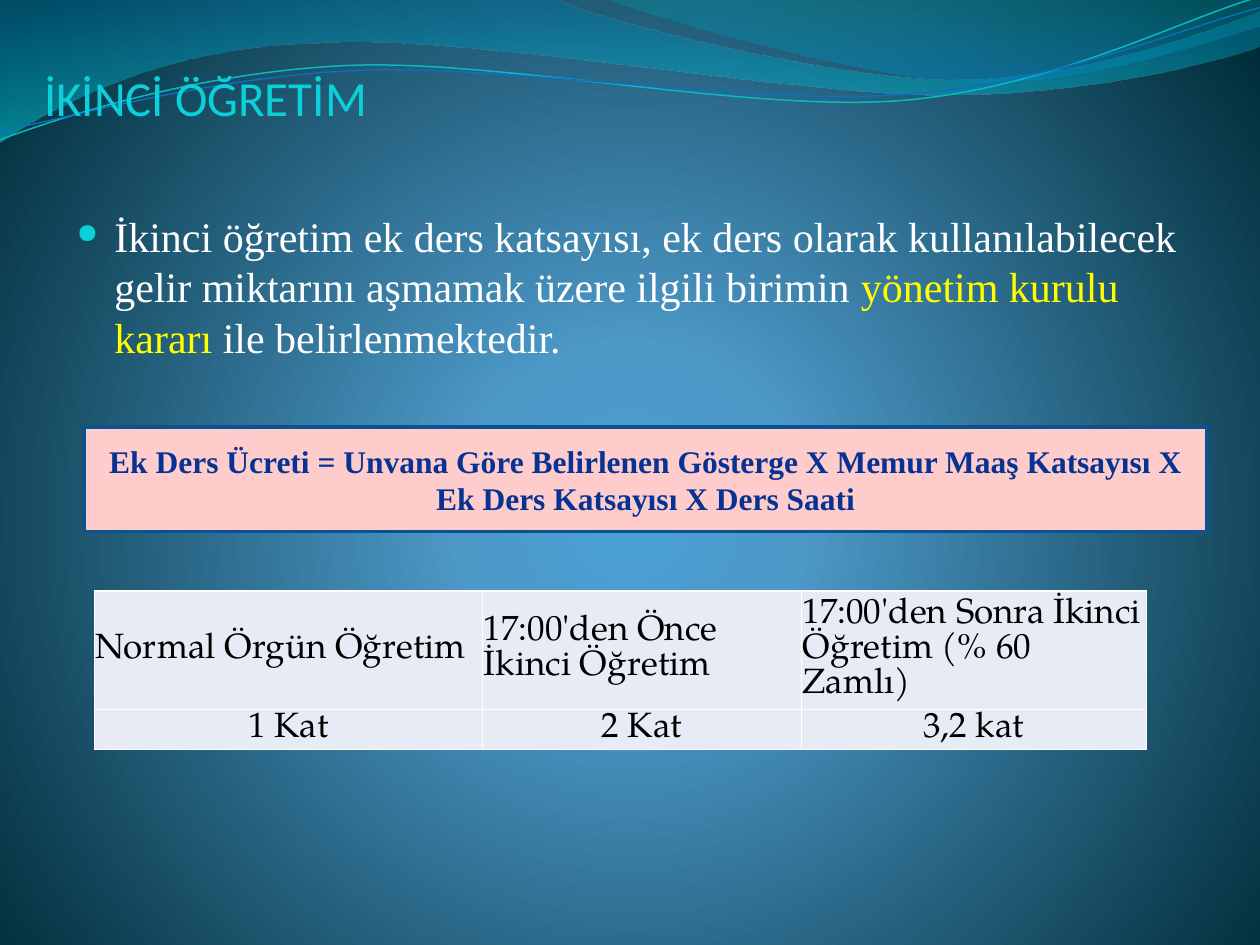
import dataclasses
import typing

import pptx
import pptx.dml.color
import pptx.enum.shapes
import pptx.enum.text
import pptx.oxml
import pptx.oxml.ns
import pptx.util

Inches = pptx.util.Inches
Anchor = pptx.enum.text.MSO_ANCHOR
Align = pptx.enum.text.PP_ALIGN
Point = tuple[float, float]
UNITS_PER_INCH = 1000


@dataclasses.dataclass(frozen=True)
class Theme:
    accent: str = "0BD0D9"
    white: str = "FFFFFF"
    black: str = "000000"
    highlight: str = "FFFF00"
    formula_fill: str = "FFCCCC"
    formula_line: str = "0B5292"
    formula_text: str = "063294"
    cell_fill: str = "E7EBF5"
    heading_font: str = "Calibri"
    body_font: str = "Times New Roman"
    table_font: str = "TeX Gyre Pagella"
    title_size: int = 28
    body_size: int = 24
    table_size: int = 20
    formula_size: int = 18


class Stop(typing.NamedTuple):
    position: int
    color: str
    opacity: int = 100


class Wave(typing.NamedTuple):
    start: Point
    segments: list[tuple[Point, ...]]
    stops: tuple[Stop, ...] = ()
    line: str = ""
    width: float = 0


THEME = Theme()
BACKGROUND = (Stop(0, "4AA0D6"), Stop(22, "4C98C7"), Stop(100, "002C38"))
RADIAL = '<a:path path="circle"><a:fillToRect l="10000" t="110000" r="10000" b="100000"/></a:path>'
VERTICAL = '<a:lin ang="5400000" scaled="1"/>'
WAVES = [
    Wave((0, 0), [((4.4, -0.01),),
                  ((4.76, 0.17), (6.64, 0.63), (7.58, 0.63)),
                  ((8.53, 0.63), (9.58, 0.26), (10, 0.09)),
                  ((10.01, 0.36),),
                  ((9.83, 0.44), (8.7, 0.76), (7.46, 0.75)),
                  ((6.22, 0.75), (3.82, 0.28), (2.57, 0.34)),
                  ((1.29, 0.36), (0.46, 0.83), (-0.01, 1.13)),
                  ((0, 0),)],
         (Stop(0, "0074A1", 45), Stop(100, "00C6CF", 55))),
    Wave((4.79, -0.01), [((5.09, 0.11), (6.82, 0.62), (7.69, 0.65)),
                         ((8.56, 0.69), (9.61, 0.32), (10, 0.21)),
                         ((10, 0),),
                         ((4.79, -0.01),)],
         (Stop(0, "00A1A9", 30), Stop(80, "008BBF", 45))),
    Wave((0, 1.11), [((0.48, 0.93), (1.58, 0.57), (2.77, 0.52)),
                     ((3.95, 0.47), (5.93, 0.89), (7.13, 0.8)),
                     ((8.33, 0.71), (9.38, 0.15), (9.98, -0.02))],
         line="0AB8BF", width=0.85),
    Wave((0, 1.04), [((0.47, 0.96), (1.64, 0.61), (2.83, 0.56)),
                     ((4.03, 0.51), (5.97, 0.84), (7.17, 0.75)),
                     ((8.36, 0.67), (9.41, 0.21), (10, 0.06))],
         line="0F6FC6", width=0.75),
]
BODY = [
    ("İkinci öğretim ek ders katsayısı, ek ders olarak kullanılabilecek gelir "
     "miktarını aşmamak üzere ilgili birimin ", THEME.white),
    ("yönetim kurulu kararı", THEME.highlight),
    (" ile belirlenmektedir.", THEME.white),
]
FORMULA = ("Ek Ders Ücreti = Unvana Göre Belirlenen Gösterge X Memur Maaş Katsayısı X "
           "Ek Ders Katsayısı X Ders Saati")
ROWS = [
    ["Normal Örgün Öğretim", "17:00'den Önce İkinci Öğretim",
     "17:00'den Sonra İkinci Öğretim (% 60 Zamlı)"],
    ["1 Kat", "2 Kat", "3,2 kat"],
]
COLUMN_WIDTHS = [3.08, 2.53, 2.74]
ROW_HEIGHTS = [0.94, 0.32]


def rgb(color: str) -> pptx.dml.color.RGBColor:
    return pptx.dml.color.RGBColor.from_string(color)


def drawing_element(markup: str):
    head, rest = markup.split(">", 1)
    return pptx.oxml.parse_xml(f'{head} {pptx.oxml.ns.nsdecls("a")}>{rest}')


def style_font(font, name: str, size: int, color: str, bold: bool = False) -> None:
    font.name = name
    font.size = pptx.util.Pt(size)
    font.bold = bold
    font.color.rgb = rgb(color)


def set_gradient(fill, properties, stops: tuple[Stop, ...], direction: str) -> None:
    fill.solid()
    fill.fore_color.rgb = rgb(stops[0].color)
    listing = "".join(
        f'<a:gs pos="{stop.position * 1000}"><a:srgbClr val="{stop.color}">'
        f'<a:alpha val="{stop.opacity * 1000}"/></a:srgbClr></a:gs>' for stop in stops)
    gradient = drawing_element(f"<a:gradFill><a:gsLst>{listing}</a:gsLst>{direction}</a:gradFill>")
    solid = properties.find(pptx.oxml.ns.qn("a:solidFill"))
    properties.replace(solid, gradient)


def bend_segments(shape, segments: list[tuple[Point, ...]]) -> None:
    lines = iter(shape._element.xpath(".//a:path/a:lnTo"))
    for segment in segments:
        group = [next(lines) for _ in segment]
        if len(group) == 3:
            curve = drawing_element("<a:cubicBezTo></a:cubicBezTo>")
            group[0].addprevious(curve)
            for line in group:
                curve.append(line[0])
                line.getparent().remove(line)


def draw_wave(slide, wave: Wave) -> None:
    points = [(x * UNITS_PER_INCH, y * UNITS_PER_INCH)
              for segment in wave.segments for x, y in segment]
    builder = slide.shapes.build_freeform(wave.start[0] * UNITS_PER_INCH,
                                          wave.start[1] * UNITS_PER_INCH,
                                          scale=Inches(1) / UNITS_PER_INCH)
    builder.add_line_segments(points, close=bool(wave.stops))
    shape = builder.convert_to_shape()
    bend_segments(shape, wave.segments)
    shape.shadow.inherit = False
    if wave.stops:
        set_gradient(shape.fill, shape._element.spPr, wave.stops, VERTICAL)
        shape.line.fill.background()
    else:
        shape.fill.background()
        shape.line.color.rgb = rgb(wave.line)
        shape.line.width = pptx.util.Pt(wave.width)


def draw_title(slide) -> None:
    box = slide.shapes.add_textbox(Inches(0.35), Inches(0.29), Inches(9), Inches(0.71))
    frame = box.text_frame
    frame.word_wrap = True
    frame.vertical_anchor = Anchor.BOTTOM
    frame.margin_left = frame.margin_right = frame.margin_bottom = 0
    frame.text = "İKİNCİ ÖĞRETİM"
    style_font(frame.paragraphs[0].runs[0].font, THEME.heading_font, THEME.title_size, THEME.accent)


def draw_body(slide) -> None:
    box = slide.shapes.add_textbox(Inches(0.51), Inches(1.62), Inches(9), Inches(3.15))
    box.text_frame.word_wrap = True
    para = box.text_frame.paragraphs[0]
    properties = para._p.get_or_add_pPr()
    properties.set("marL", str(Inches(0.3)))
    properties.set("indent", str(Inches(-0.3)))
    for markup in (f'<a:buClr><a:srgbClr val="{THEME.accent}"/></a:buClr>',
                   '<a:buSzPct val="65000"></a:buSzPct>',
                   '<a:buChar char="●"></a:buChar>'):
        properties.append(drawing_element(markup))
    for text, color in BODY:
        span = para.add_run()
        span.text = text
        style_font(span.font, THEME.body_font, THEME.body_size, color)


def draw_formula(slide) -> None:
    box = slide.shapes.add_shape(pptx.enum.shapes.MSO_SHAPE.RECTANGLE,
                                 Inches(0.67), Inches(3.39), Inches(8.91), Inches(0.83))
    box.shadow.inherit = False
    box.fill.solid()
    box.fill.fore_color.rgb = rgb(THEME.formula_fill)
    box.line.color.rgb = rgb(THEME.formula_line)
    box.line.width = pptx.util.Pt(2)
    frame = box.text_frame
    frame.word_wrap = True
    frame.vertical_anchor = Anchor.MIDDLE
    frame.text = FORMULA
    para = frame.paragraphs[0]
    para.alignment = Align.CENTER
    style_font(para.runs[0].font, THEME.body_font, THEME.formula_size, THEME.formula_text, True)


def fill_cell(cell, text: str, alignment) -> None:
    cell.margin_left = cell.margin_right = cell.margin_top = Inches(0.01)
    cell.margin_bottom = 0
    cell.vertical_anchor = Anchor.MIDDLE
    cell.fill.solid()
    cell.fill.fore_color.rgb = rgb(THEME.cell_fill)
    cell.text_frame.text = text
    para = cell.text_frame.paragraphs[0]
    para.alignment = alignment
    para.line_spacing = pptx.util.Pt(THEME.table_size)
    style_font(para.runs[0].font, THEME.table_font, THEME.table_size, THEME.black)
    properties = cell._tc.get_or_add_tcPr()
    for index, side in enumerate(("lnL", "lnR", "lnT", "lnB")):
        properties.insert(index, drawing_element(
            f'<a:{side} w="12700"><a:solidFill><a:srgbClr val="{THEME.white}"/>'
            f"</a:solidFill></a:{side}>"))


def draw_table(slide) -> None:
    table = slide.shapes.add_table(len(ROWS), len(COLUMN_WIDTHS), Inches(0.75), Inches(4.69),
                                   Inches(sum(COLUMN_WIDTHS)), Inches(sum(ROW_HEIGHTS))).table
    for column, width in zip(table.columns, COLUMN_WIDTHS):
        column.width = Inches(width)
    for row, height, texts, alignment in zip(table.rows, ROW_HEIGHTS, ROWS,
                                             (Align.LEFT, Align.CENTER)):
        row.height = Inches(height)
        for cell, text in zip(row.cells, texts):
            fill_cell(cell, text, alignment)


def main() -> None:
    deck = pptx.Presentation()
    deck.slide_width, deck.slide_height = Inches(10), Inches(7.5)
    slide = deck.slides.add_slide(deck.slide_layouts[6])
    fill = slide.background.fill
    fill.solid()
    set_gradient(fill, slide._element.xpath(".//p:bgPr")[0], BACKGROUND, RADIAL)
    for wave in WAVES:
        draw_wave(slide, wave)
    draw_body(slide)
    draw_formula(slide)
    draw_title(slide)
    draw_table(slide)
    deck.save("out.pptx")


if __name__ == "__main__":
    main()
